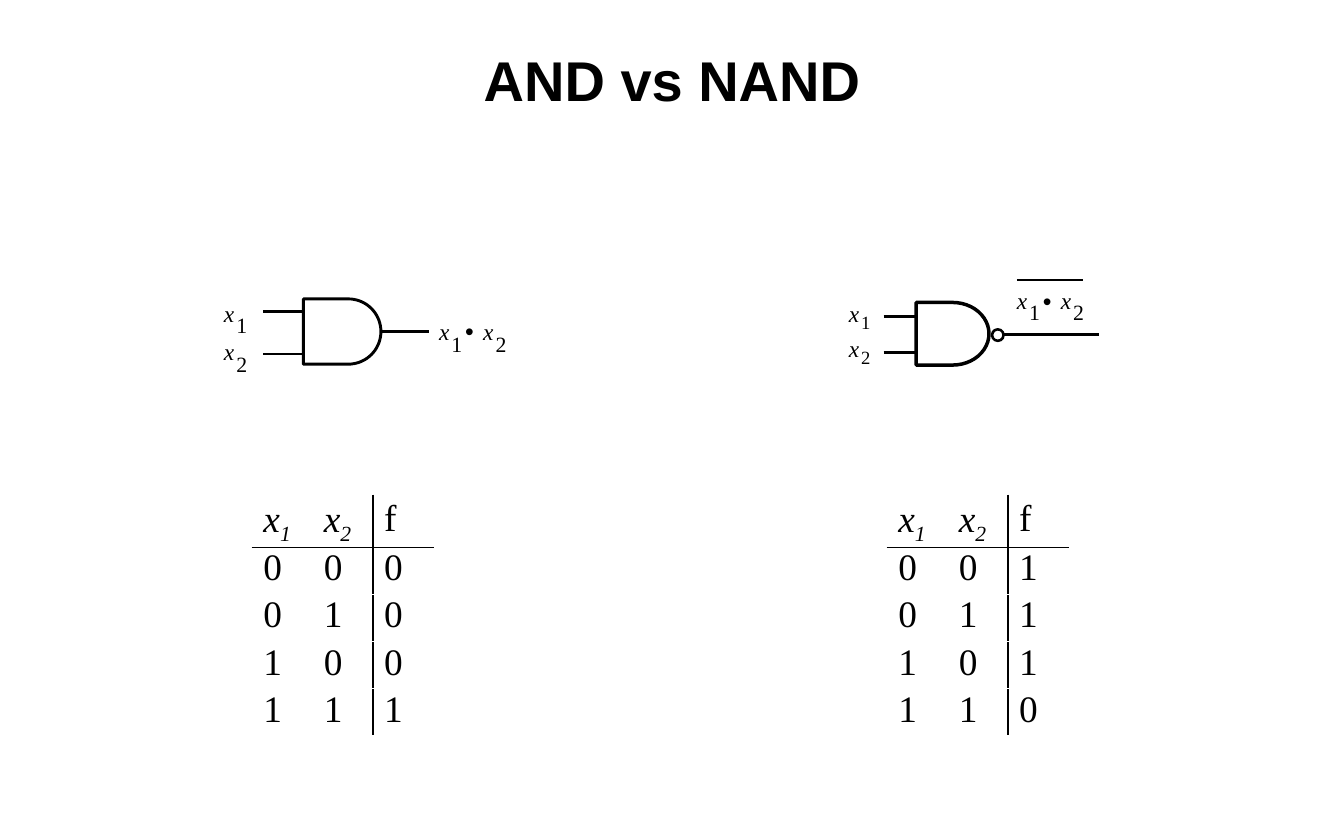
from math import cos, pi, sin

from lxml.etree import SubElement
from pptx import Presentation
from pptx.dml.color import RGBColor
from pptx.enum.shapes import MSO_CONNECTOR as CONN, MSO_SHAPE as SHAPE
from pptx.enum.text import MSO_ANCHOR as ANCHOR, PP_ALIGN as ALIGN
from pptx.oxml.ns import qn
from pptx.util import Cm, Pt

BLACK = RGBColor(0, 0, 0)
WHITE = RGBColor(255, 255, 255)
SERIF, SANS = "Times New Roman", "Arial"
INPUTS = ("00", "01", "10", "11")
ROW_H, COL_W = 1.07, 1.37


def add_run(p, text, size, font=SERIF, bold=False, italic=False):
    r = p.add_run()
    r.text = text
    r.font.size, r.font.name = Pt(size), font
    r.font.bold, r.font.italic = bold, italic
    r.font.color.rgb = BLACK
    return r


def add_text(s, text, x, y, w, h, size, align=ALIGN.LEFT, anchor=ANCHOR.TOP, **fmt):
    tf = s.shapes.add_textbox(Cm(x), Cm(y), Cm(w), Cm(h)).text_frame
    tf.word_wrap = True
    tf.margin_left = tf.margin_right = tf.margin_top = tf.margin_bottom = 0
    tf.vertical_anchor = anchor
    tf.paragraphs[0].alignment = align
    add_run(tf.paragraphs[0], text, size, **fmt)


def add_variable(s, index, x, y, sub_size=14, drop=0.3):
    """An italic x with its index set lower as a separate label."""
    add_text(s, "x", x, y, 0.4, 0.64, 15, italic=True)
    add_text(s, index, x + 0.28, y + drop, 0.38, 0.6, sub_size)


def add_product(s, x, y, dot_y):
    add_variable(s, "1", x, y)
    add_text(s, "•", x + 0.59, dot_y, 0.36, 0.69, 16, font=SANS)
    add_variable(s, "2", x + 1.0, y)


def add_wire(s, x1, x2, y, width=1.63):
    c = s.shapes.add_connector(CONN.STRAIGHT, Cm(x1), Cm(y), Cm(x2), Cm(y))
    c.line.color.rgb, c.line.width = BLACK, Pt(width)
    SubElement(c._element.spPr, qn("a:effectLst"))


def style_outline(sp, width):
    sp.shadow.inherit = False
    sp.fill.solid()
    sp.fill.fore_color.rgb = WHITE
    sp.line.color.rgb, sp.line.width = BLACK, Pt(width)


def add_outline(s, kind, x, y, w, h, width):
    style_outline(s.shapes.add_shape(kind, Cm(x), Cm(y), Cm(w), Cm(h)), width)


def add_round_gate(s, left, cx, cy, radius, width, steps=36):
    """A square back closed by a semicircular front."""
    angles = [pi * (i / steps - 0.5) for i in range(steps + 1)]
    arc = [(Cm(cx + radius * cos(a)), Cm(cy + radius * sin(a))) for a in angles]
    fb = s.shapes.build_freeform(Cm(left), Cm(cy - radius))
    fb.add_line_segments(arc + [(Cm(left), Cm(cy + radius))], close=True)
    style_outline(fb.convert_to_shape(), width)


def add_border(tc_pr, side):
    ln = SubElement(tc_pr, qn("a:" + side), w=str(Pt(1)))
    fill = SubElement(ln, qn("a:solidFill"))
    SubElement(fill, qn("a:srgbClr"), val=str(BLACK))


def fill_cell(cell, text, sub="", italic=False, sides=()):
    cell.vertical_anchor = ANCHOR.MIDDLE
    p = cell.text_frame.paragraphs[0]
    p.line_spacing = 0.8
    before = SubElement(p._p.get_or_add_pPr(), qn("a:spcBef"))
    SubElement(before, qn("a:spcPct"), val="20000")
    add_run(p, text, 24, italic=italic)
    if sub:
        r = add_run(p, sub, 24, italic=italic)
        r.font._element.set("baseline", "-25000")
    for side in sides:
        add_border(cell._tc.get_or_add_tcPr(), side)
    cell.fill.background()


def add_truth_table(s, x, y, outputs, header_h):
    tbl = s.shapes.add_table(5, 3, Cm(x), Cm(y), Cm(3 * COL_W), Cm(5 * ROW_H)).table
    tbl.first_row = tbl.horz_banding = False
    for col in tbl.columns:
        col.width = Cm(COL_W)
    for i, row in enumerate(tbl.rows):
        row.height = Cm(ROW_H if i else header_h)
    rows = [("x", "x", "f")] + [(*bits, f) for bits, f in zip(INPUTS, outputs)]
    for i, values in enumerate(rows):
        for j, value in enumerate(values):
            # Rules: below the header and left of the output column
            wanted = {"lnL": j == 2, "lnR": j == 1, "lnT": i == 1, "lnB": i == 0}
            is_var = value == "x"
            fill_cell(tbl.cell(i, j), value, sub=str(j + 1) if is_var else "",
                      italic=is_var, sides=[k for k, on in wanted.items() if on])


def add_and_gate(s):
    for index, label_y, wire_y in (("1", 6.78, 7.06), ("2", 7.65, 8.03)):
        add_variable(s, index, 5.08, label_y)
        add_wire(s, 5.97, 6.88, wire_y)
    add_wire(s, 8.64, 9.73, 7.52)
    add_round_gate(s, 6.88, 7.9, 7.52, 0.74, 1.88)
    add_product(s, 9.96, 7.19, 7.16)


def add_nand_gate(s):
    for index, label_y, wire_y in (("1", 6.78, 7.17), ("2", 7.59, 8.0)):
        add_variable(s, index, 19.25, label_y, sub_size=12, drop=0.26)
        add_wire(s, 20.04, 20.85, wire_y, 2)
    add_outline(s, SHAPE.FLOWCHART_DELAY, 20.78, 6.86, 1.65, 1.42, 2.25)
    # Inverting bubble and output
    add_outline(s, SHAPE.OVAL, 22.5, 7.47, 0.26, 0.26, 1.63)
    add_wire(s, 22.76, 24.92, 7.58)
    # Negated product with its overbar
    add_product(s, 23.06, 6.48, 6.48)
    add_wire(s, 23.06, 24.56, 6.35, 1.75)


def main():
    prs = Presentation()
    prs.slide_width, prs.slide_height = Cm(30.48), Cm(19.05)
    s = prs.slides.add_slide(prs.slide_layouts[6])

    # Title
    add_text(s, "AND vs NAND", 0, 0.84, 30.48, 1.9, 36, align=ALIGN.CENTER,
             anchor=ANCHOR.MIDDLE, font=SANS, bold=True)

    # Gates
    add_and_gate(s)
    add_nand_gate(s)

    # Truth tables
    add_truth_table(s, 5.72, 11.23, "0001", header_h=1.16)
    add_truth_table(s, 20.12, 11.23, "1110", header_h=1.09)

    prs.save("out.pptx")


if __name__ == "__main__":
    main()
